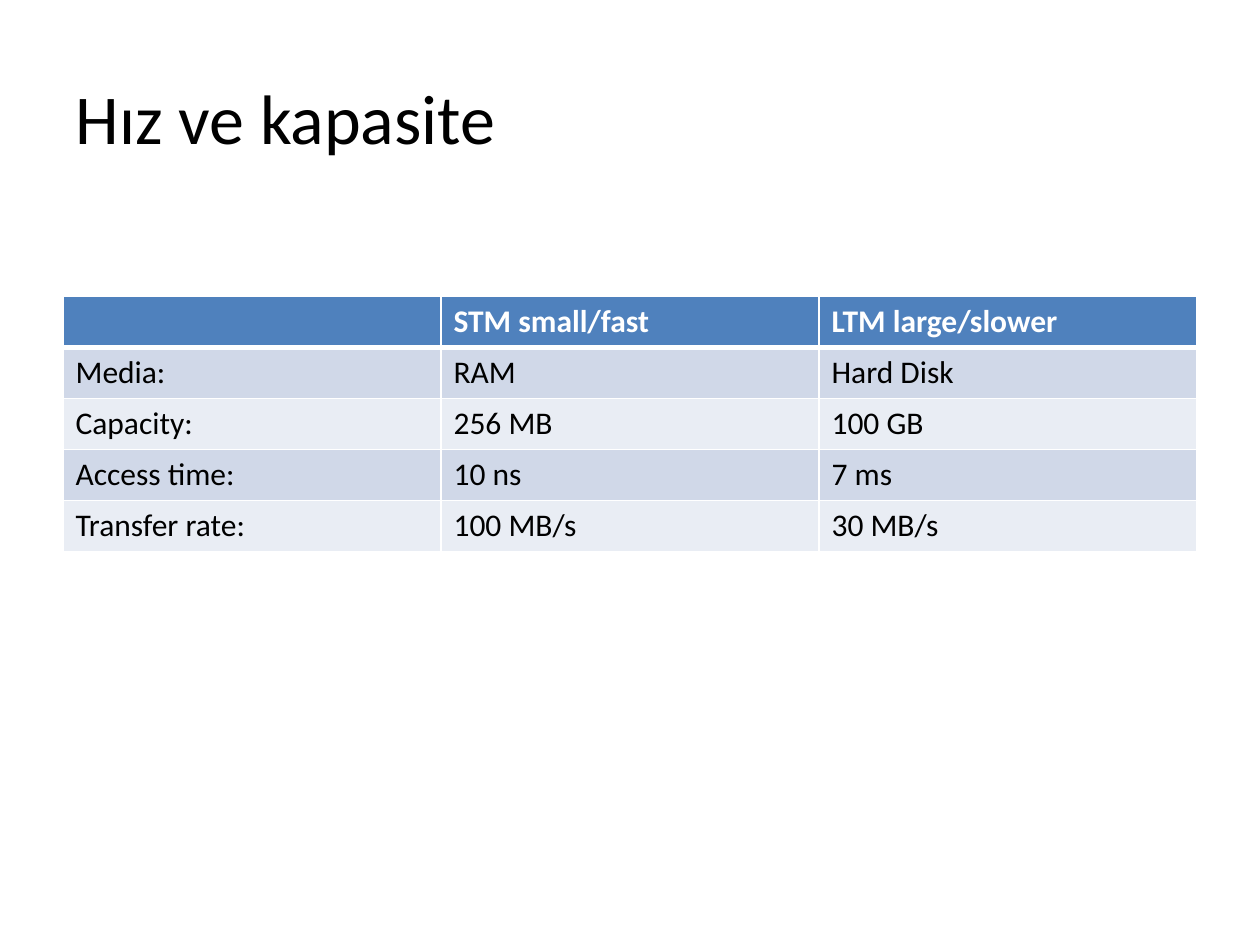
import pptx
import pptx.dml.color
import pptx.enum.text
import pptx.oxml
import pptx.oxml.ns
import pptx.util

Cm = pptx.util.Cm
COLORS = {
    "text": "000000",
    "white": "FFFFFF",
    "header": "4F81BD",
    "odd": "D0D8E8",
    "even": "E9EDF4",
}
ROWS = [
    ["", "STM small/fast", "LTM large/slower"],
    ["Media:", "RAM", "Hard Disk"],
    ["Capacity:", "256 MB", "100 GB"],
    ["Access time:", "10 ns", "7 ms"],
    ["Transfer rate:", "100 MB/s", "30 MB/s"],
]


class SlideBuilder:
    """Hold the deck style and the current slide."""

    def __init__(self, prs, font="Calibri"):
        self.font = font
        self.s = prs.slides.add_slide(prs.slide_layouts[5])

    def color(self, name):
        return pptx.dml.color.RGBColor.from_string(COLORS[name])

    def run(self, p, text, size, color, bold=False):
        r = p.add_run()
        r.text = text
        r.font.name = self.font
        r.font.size = pptx.util.Pt(size)
        r.font.bold = bold
        r.font.color.rgb = self.color(color)

    def title(self, text, left, top, width, height):
        sp = self.s.shapes.title
        sp.left, sp.top, sp.width, sp.height = Cm(left), Cm(top), Cm(width), Cm(height)
        tf = sp.text_frame
        tf.vertical_anchor = pptx.enum.text.MSO_ANCHOR.MIDDLE
        p = tf.paragraphs[0]
        p.alignment = pptx.enum.text.PP_ALIGN.LEFT
        self.run(p, text, 40, "text")

    def borders(self, cell, top, bottom):
        tcPr = cell._tc.get_or_add_tcPr()
        for side, width in (("L", 1), ("R", 1), ("T", top), ("B", bottom)):
            tcPr.append(pptx.oxml.parse_xml(
                f'<a:ln{side} {pptx.oxml.ns.nsdecls("a")} w="{pptx.util.Pt(width)}">'
                f'<a:solidFill><a:srgbClr val="{COLORS["white"]}"/></a:solidFill>'
                f'</a:ln{side}>'))

    def table(self, rows, left, top, width, row_height):
        n_rows, n_cols = len(rows), len(rows[0])
        table = self.s.shapes.add_table(
            n_rows, n_cols, Cm(left), Cm(top), Cm(width), Cm(row_height * n_rows)).table
        for i, row in enumerate(rows):
            header = i == 0
            fill = "header" if header else "odd" if i % 2 else "even"
            for j, text in enumerate(row):
                cell = table.cell(i, j)
                self.borders(cell, 3 if i == 1 else 1, 3 if header else 1)
                cell.fill.solid()
                cell.fill.fore_color.rgb = self.color(fill)
                if text:
                    self.run(cell.text_frame.paragraphs[0], text, 18,
                             "white" if header else "text", header)


def main():
    prs = pptx.Presentation()
    prs.slide_width, prs.slide_height = Cm(25.4), Cm(19.05)
    slide = SlideBuilder(prs)
    slide.title("Hız ve kapasite", 1.27, 0.76, 22.86, 3.18)
    slide.table(ROWS, 1.27, 5.97, 22.86, 1.03)
    prs.save("out.pptx")


if __name__ == "__main__":
    main()
